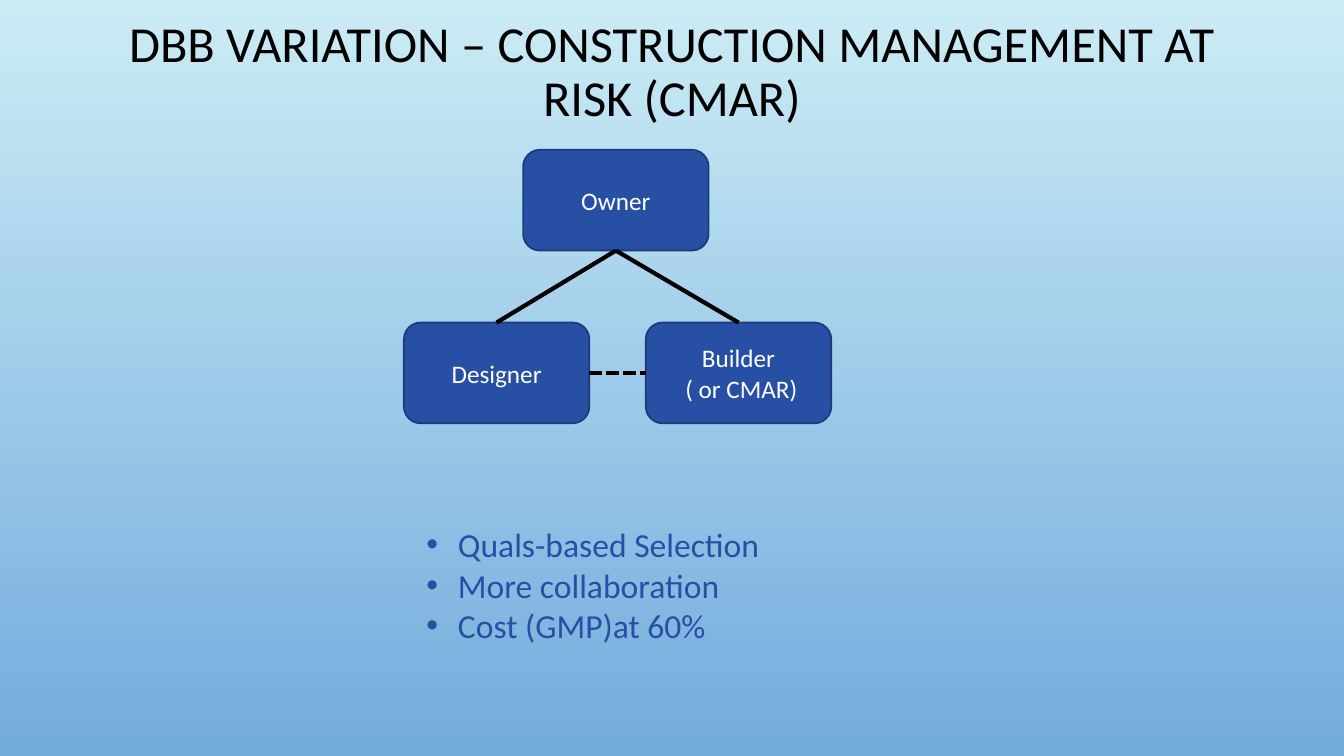
from lxml.etree import SubElement
from pptx import Presentation
from pptx.dml.color import RGBColor
from pptx.enum.dml import MSO_LINE
from pptx.enum.shapes import MSO_CONNECTOR, MSO_SHAPE
from pptx.enum.text import MSO_ANCHOR, MSO_AUTO_SIZE, PP_ALIGN
from pptx.oxml.ns import qn
from pptx.util import Pt

COLORS = {
    "top": "CBECF5",
    "base": "73ABDD",
    "blue": "274FA4",
    "edge": "1D3A79",
    "black": "000000",
    "white": "FFFFFF",
}
BOX_W, BOX_H = 132.5, 72
TOP, LEFT, BOTTOM, RIGHT = range(4)


def color(name):
    return RGBColor.from_string(COLORS[name])


def place(shape, x, y, w, h):
    shape.left, shape.top = Pt(x), Pt(y)
    shape.width, shape.height = Pt(w), Pt(h)


def write(shape, *lines, size, ink, align=PP_ALIGN.CENTER,
          anchor=MSO_ANCHOR.MIDDLE, spacing=1.0, indent=0):
    frame = shape.text_frame
    frame.text = "\n".join(lines)
    frame.word_wrap = True
    frame.auto_size = MSO_AUTO_SIZE.NONE
    frame.vertical_anchor = anchor
    for para in frame.paragraphs:
        para.alignment = align
        para.line_spacing = spacing
        para.space_before = Pt(0)
        if indent:
            props = para._p.get_or_add_pPr()
            props.set("marL", str(Pt(indent)))
            props.set("indent", str(-Pt(indent)))
        for run in para.runs:
            run.font.name = "Calibri"
            run.font.size = Pt(size)
            run.font.color.rgb = color(ink)


def shade(slide):
    fill = slide.background.fill
    fill.gradient()
    fill.gradient_angle = 270
    for stop, name in zip(fill.gradient_stops, ("top", "base")):
        stop.color.rgb = color(name)


def add_box(slide, x, y, *lines):
    box = slide.shapes.add_shape(
        MSO_SHAPE.ROUNDED_RECTANGLE, Pt(x), Pt(y), Pt(BOX_W), Pt(BOX_H))
    box.shadow.inherit = False
    box.fill.solid()
    box.fill.fore_color.rgb = color("blue")
    box.line.color.rgb = color("edge")
    box.line.width = Pt(1.25)
    write(box, *lines, size=18, ink="white")
    return box


def link(slide, start, out, end, into, dash=None):
    line = slide.shapes.add_connector(MSO_CONNECTOR.STRAIGHT, 0, 0, 0, 0)
    line.begin_connect(start, out)
    line.end_connect(end, into)
    line.line.color.rgb = color("black")
    line.line.width = Pt(3)
    if dash:
        line.line.dash_style = dash
    SubElement(line._element.spPr, qn("a:effectLst"))


def main():
    """Build the slide on construction management at risk."""
    deck = Presentation()
    deck.slide_width, deck.slide_height = Pt(960), Pt(540)
    slide = deck.slides.add_slide(deck.slide_layouts[1])
    shade(slide)

    title, body = slide.placeholders
    place(title, 72, -10.8, 816, 126)
    write(title, "DBB VARIATION – CONSTRUCTION MANAGEMENT AT RISK (CMAR)",
          size=36, ink="black", spacing=0.9)

    owner = add_box(slide, 373.7, 107, "Owner")
    builder = add_box(slide, 461.3, 230.4, "Builder", " ( or CMAR)")
    designer = add_box(slide, 288.5, 230.4, "Designer")
    link(slide, owner, BOTTOM, designer, TOP)
    link(slide, owner, BOTTOM, builder, TOP)
    link(slide, designer, RIGHT, builder, LEFT, MSO_LINE.SQUARE_DOT)

    place(body, 297.4, 370.8, 252.7, 94.3)
    write(body, "Quals-based Selection", "More collaboration",
          "Cost (GMP)at 60%", size=24, ink="blue", align=PP_ALIGN.LEFT,
          anchor=MSO_ANCHOR.TOP, indent=22.5)
    deck.save("out.pptx")


if __name__ == "__main__":
    main()
